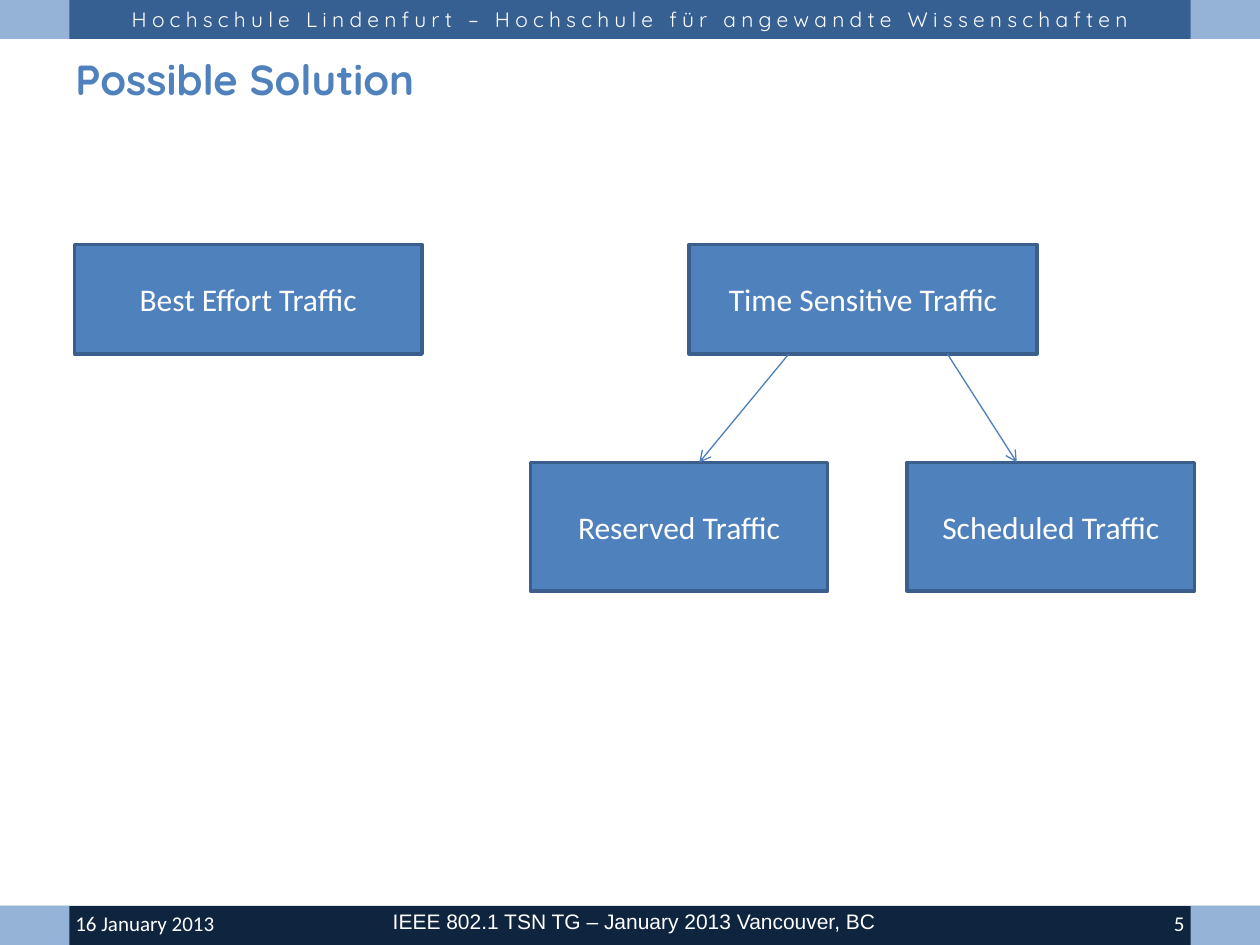
from lxml import etree
from pptx import Presentation
from pptx.dml.color import RGBColor
from pptx.enum.shapes import MSO_CONNECTOR, MSO_SHAPE
from pptx.enum.text import MSO_ANCHOR, PP_ALIGN
from pptx.oxml.ns import qn
from pptx.util import Inches, Pt

RECTANGLE = MSO_SHAPE.RECTANGLE
STRAIGHT = MSO_CONNECTOR.STRAIGHT
TOP, MIDDLE = MSO_ANCHOR.TOP, MSO_ANCHOR.MIDDLE
LEFT, CENTER, RIGHT = PP_ALIGN.LEFT, PP_ALIGN.CENTER, PP_ALIGN.RIGHT

COLUMNS, ROWS = 100, 75
CELL = Inches(0.1)
BAND, CORNER = 3.1, 5.5
FOOTER_ROW = ROWS - BAND
BOX_ROW, BOX_HEIGHT, CHILD_ROW = 19.4, 8.7, 36.7

COLORS = {
    "header": "376092",
    "footer": "0F243E",
    "corner": "95B3D7",
    "box": "4F81BD",
    "border": "3A5F8C",
    "arrow": "4B7EBC",
    "white": "FFFFFF",
}


def color(name):
    """Return the named palette colour."""
    return RGBColor.from_string(COLORS[name])


def cells(*values):
    """Convert grid units to slide lengths."""
    return [round(value * CELL) for value in values]


def write(shape, text, align=CENTER, anchor=MIDDLE, ink="white", spacing=0, **font):
    """Write one formatted paragraph into a shape."""
    frame = shape.text_frame
    frame.word_wrap = True
    frame.vertical_anchor = anchor
    para = frame.paragraphs[0]
    para.alignment = align
    span = para.add_run()
    span.text = text
    for name, value in font.items():
        setattr(span.font, name, value)
    span.font.color.rgb = color(ink)
    if spacing:
        span.font._element.set("spc", str(spacing * 100))


def add_label(page, place, text, **style):
    """Add a text box on the grid."""
    write(page.shapes.add_textbox(*cells(*place)), text, **style)


def add_rectangle(page, place, fill):
    """Add a flat borderless rectangle."""
    shape = page.shapes.add_shape(RECTANGLE, *cells(*place))
    shape.shadow.inherit = False
    shape.fill.solid()
    shape.fill.fore_color.rgb = color(fill)
    shape.line.fill.background()
    return shape


def add_traffic_box(page, place, text):
    """Add a bordered box naming a traffic class."""
    box = add_rectangle(page, place, "box")
    box.line.color.rgb = color("border")
    box.line.width = Pt(2)
    write(box, text, name="Calibri", size=Pt(18))


def add_arrow(page, start, end):
    """Add a thin line with an open arrowhead at its end."""
    arrow = page.shapes.add_connector(STRAIGHT, *cells(*start, *end))
    arrow.line.color.rgb = color("arrow")
    arrow.line.width = Pt(0.75)
    etree.SubElement(arrow.line._get_or_add_ln(), qn("a:tailEnd"), type="arrow")
    etree.SubElement(arrow._element.spPr, qn("a:effectLst"))


def add_bands(page):
    """Add the header and footer bands with their light corners."""
    for row, fill in ((0, "header"), (FOOTER_ROW, "footer")):
        add_rectangle(page, (0, row, COLUMNS, BAND), fill)
        for column in (0, COLUMNS - CORNER):
            add_rectangle(page, (column, row, CORNER, BAND), "corner")


def add_labels(page):
    """Add the header, title and footer texts."""
    add_label(page, (5.5, 0, 89.1, 3),
              "Hochschule Lindenfurt – Hochschule für angewandte Wissenschaften",
              anchor=TOP, spacing=3, name="Quicksand", size=Pt(12))
    add_label(page, (5, 3.9, 90, 4.7), "Possible Solution", align=LEFT,
              ink="box", name="Quicksand", size=Pt(24), bold=True)
    footers = (
        ((5, 72.1, 23.3, 2.4), "16 January 2013", LEFT, "Calibri"),
        ((71.7, 72.1, 23.3, 2.4), "5", RIGHT, "Calibri"),
        ((28.7, 71.7, 43.3, 2.8),
         "IEEE 802.1 TSN TG – January 2013 Vancouver, BC", CENTER, "Arial"),
    )
    for place, text, align, font in footers:
        add_label(page, place, text, align=align, name=font, size=Pt(12))


def add_traffic_tree(page):
    """Add the traffic classes and the arrows between them."""
    boxes = (
        ((54.7, BOX_ROW, 27.6, BOX_HEIGHT), "Time Sensitive Traffic"),
        ((42.1, CHILD_ROW, 23.6, 10.2), "Reserved Traffic"),
        ((72, CHILD_ROW, 22.8, 10.2), "Scheduled Traffic"),
        ((5.9, BOX_ROW, 27.6, BOX_HEIGHT), "Best Effort Traffic"),
    )
    for place, text in boxes:
        add_traffic_box(page, place, text)
    for start, end in ((62.6, 55.5), (75.2, 80.7)):
        add_arrow(page, (start, BOX_ROW + BOX_HEIGHT), (end, CHILD_ROW))


def main():
    """Build and save the traffic class slide."""
    deck = Presentation()
    deck.slide_width, deck.slide_height = cells(COLUMNS, ROWS)
    page = deck.slides.add_slide(deck.slide_layouts[6])
    add_bands(page)
    add_labels(page)
    add_traffic_tree(page)
    deck.save("out.pptx")


if __name__ == "__main__":
    main()
